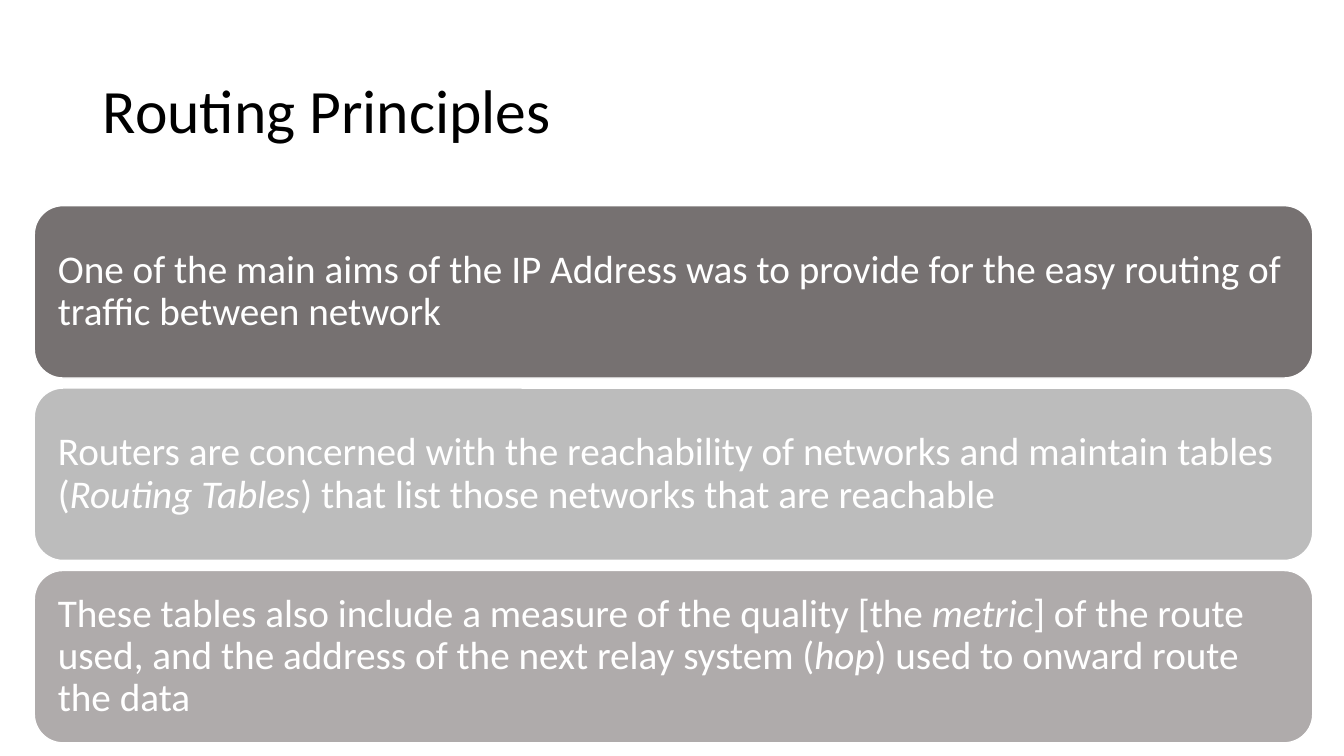
from dataclasses import dataclass

from pptx import Presentation
from pptx.dml.color import RGBColor
from pptx.enum.shapes import MSO_SHAPE
from pptx.enum.text import MSO_ANCHOR, PP_ALIGN
from pptx.util import Inches, Pt


@dataclass(frozen=True)
class Theme:
    font: str = "Calibri"
    title_size: int = 44
    body_size: int = 28
    line_spacing: float = 0.9
    black: str = "000000"
    white: str = "FFFFFF"
    panel_fills: tuple = ("767171", "BCBCBC", "AFABAB")


# Asterisks enclose italic words.
PRINCIPLES = (
    "One of the main aims of the IP Address was to provide for the easy "
    "routing of traffic between network",
    "Routers are concerned with the reachability of networks and maintain "
    "tables (*Routing Tables*) that list those networks that are reachable",
    "These tables also include a measure of the quality [the *metric*] of the "
    "route used, and the address of the next relay system (*hop*) used to "
    "onward route the data",
)
PANEL_LEFT, PANEL_TOP = 0.34, 2.04
PANEL_WIDTH, PANEL_HEIGHT = 12.68, 1.71
PANEL_PITCH = 1.81


class SlideBuilder:
    def __init__(self, slide, theme):
        self.slide = slide
        self.theme = theme

    def format_paragraph(self, paragraph, size, color):
        paragraph.alignment = PP_ALIGN.LEFT
        paragraph.line_spacing = self.theme.line_spacing
        paragraph.font.name = self.theme.font
        paragraph.font.size = Pt(size)
        paragraph.font.color.rgb = RGBColor.from_string(color)

    def title(self, text, left, top, width, height):
        shape = self.slide.shapes.title
        shape.left, shape.top = Inches(left), Inches(top)
        shape.width, shape.height = Inches(width), Inches(height)
        shape.text_frame.text = text
        shape.text_frame.vertical_anchor = MSO_ANCHOR.MIDDLE
        self.format_paragraph(shape.text_frame.paragraphs[0],
                              self.theme.title_size, self.theme.black)

    def panel(self, text, fill, left, top, width, height):
        shape = self.slide.shapes.add_shape(
            MSO_SHAPE.ROUNDED_RECTANGLE,
            Inches(left), Inches(top), Inches(width), Inches(height))
        shape.shadow.inherit = False
        shape.fill.solid()
        shape.fill.fore_color.rgb = RGBColor.from_string(fill)
        shape.line.color.rgb = RGBColor.from_string(self.theme.white)
        shape.line.width = Pt(1)

        frame = shape.text_frame
        frame.word_wrap = True
        frame.vertical_anchor = MSO_ANCHOR.MIDDLE
        frame.margin_left = frame.margin_right = Inches(0.15)
        frame.margin_top = frame.margin_bottom = Inches(0.15)
        paragraph = frame.paragraphs[0]
        self.format_paragraph(paragraph, self.theme.body_size, self.theme.white)
        for index, part in enumerate(text.split("*")):
            run = paragraph.add_run()
            run.text = part
            if index % 2:
                run.font.italic = True


def main():
    presentation = Presentation()
    presentation.slide_width = Inches(13.33)
    presentation.slide_height = Inches(7.5)
    title_only = presentation.slide_layouts.get_by_name("Title Only")
    slide = presentation.slides.add_slide(title_only)

    theme = Theme()
    builder = SlideBuilder(slide, theme)
    builder.title("Routing Principles", 0.92, 0.4, 11.5, 1.45)
    for row, (text, fill) in enumerate(zip(PRINCIPLES, theme.panel_fills)):
        builder.panel(text, fill, PANEL_LEFT, PANEL_TOP + row * PANEL_PITCH,
                      PANEL_WIDTH, PANEL_HEIGHT)
    presentation.save("out.pptx")


if __name__ == "__main__":
    main()
